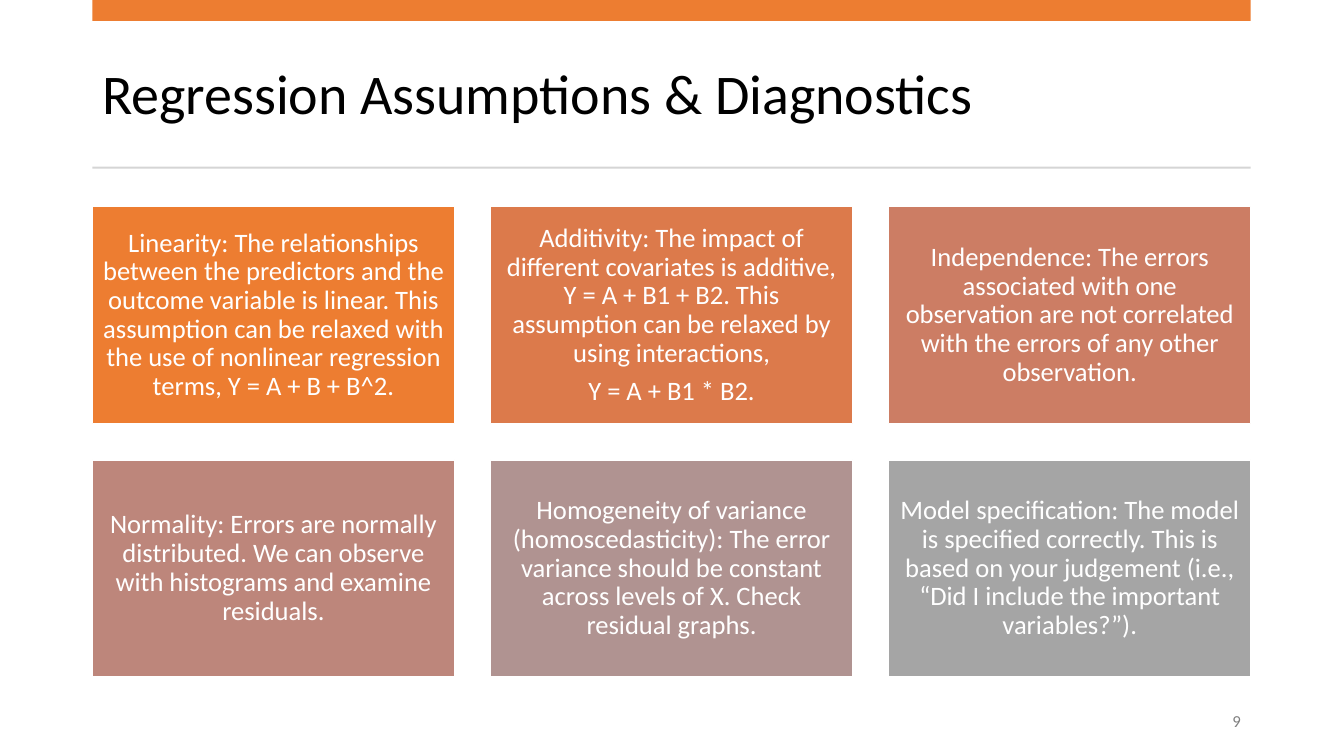
"""Build the slide on regression assumptions and diagnostics."""
from pptx import Presentation
from pptx.dml.color import RGBColor
from pptx.enum import shapes, text
from pptx.util import Cm, Pt

TITLE = "Regression Assumptions & Diagnostics"
NUMBER = "9"
CARDS = [
    ("linear", ["Linearity: The relationships between the predictors and the outcome "
                "variable is linear. This assumption can be relaxed with the use of "
                "nonlinear regression terms, Y = A + B + B^2."]),
    ("add", ["Additivity: The impact of different covariates is additive, "
             "Y = A + B1 + B2. This assumption can be relaxed by using interactions,",
             "Y = A + B1 * B2."]),
    ("indep", ["Independence: The errors associated with one observation are not "
               "correlated with the errors of any other observation."]),
    ("normal", ["Normality: Errors are normally distributed. We can observe with "
                "histograms and examine residuals."]),
    ("homog", ["Homogeneity of variance (homoscedasticity): The error variance should "
               "be constant across levels of X. Check residual graphs."]),
    ("model", ["Model specification: The model is specified correctly. This is based "
               "on your judgement (i.e., “Did I include the important variables?”)."]),
]
COLORS = {
    "linear": "ED7D31", "add": "DC7A4B", "indep": "CC7D64",
    "normal": "BD867B", "homog": "B09391", "model": "A5A5A5",
    "bar": "ED7D31", "rule": "D5D5D5",
    "white": "FFFFFF", "black": "000000", "gray": "808080",
}
FONT = "Calibri"
LEFT, WIDTH = 2.33, 29.19
COLS, GAP = 3, 0.91
CARD_TOP, CARD_H = 5.21, 5.47
CARD_W = (WIDTH - GAP * (COLS - 1)) / COLS


def color(name):
    """Return the named colour."""
    return RGBColor.from_string(COLORS[name])


def write(frame, lines, size, ink, align, spacing=1.0):
    """Fill a text frame with evenly styled, vertically centred lines."""
    frame.word_wrap = True
    frame.vertical_anchor = text.MSO_ANCHOR.MIDDLE
    frame.text = "\n".join(lines)
    for par in frame.paragraphs:
        par.alignment = align
        par.line_spacing = spacing
        par.font.name = FONT
        par.font.size = Pt(size)
        par.font.color.rgb = color(ink)
    for par in frame.paragraphs[:-1]:
        par.space_after = Pt(size * 0.35)


def block(slide, box, fill):
    """Add a plain filled rectangle."""
    shape = slide.shapes.add_shape(shapes.MSO_SHAPE.RECTANGLE, *map(Cm, box))
    shape.shadow.inherit = False
    shape.fill.solid()
    shape.fill.fore_color.rgb = color(fill)
    shape.line.fill.background()
    return shape


def card(slide, index, fill, lines):
    """Add one assumption card at its place in the grid."""
    row, col = divmod(index, COLS)
    left = LEFT + col * (CARD_W + GAP)
    top = CARD_TOP + row * (CARD_H + GAP)
    shape = block(slide, (left, top, CARD_W, CARD_H), fill)
    shape.line.color.rgb = color("white")
    shape.line.width = Pt(1)
    frame = shape.text_frame
    frame.margin_left = frame.margin_right = Cm(0.2)
    frame.margin_top = frame.margin_bottom = Cm(0.2)
    write(frame, lines, 19, "white", text.PP_ALIGN.CENTER, 0.9)


def main():
    """Build and save the slide."""
    deck = Presentation()
    deck.slide_width, deck.slide_height = Cm(33.87), Cm(19.05)
    slide = deck.slides.add_slide(deck.slide_layouts[6])
    block(slide, (LEFT, 0, WIDTH, 0.53), "bar")
    block(slide, (LEFT, 4.2, WIDTH, 0.05), "rule")
    title = slide.shapes.add_textbox(Cm(LEFT), Cm(0.94), Cm(WIDTH), Cm(3))
    write(title.text_frame, [TITLE], 40, "black", text.PP_ALIGN.LEFT, 0.9)
    for index, (fill, lines) in enumerate(CARDS):
        card(slide, index, fill, lines)
    page = slide.shapes.add_textbox(Cm(24.2), Cm(17.65), Cm(7.32), Cm(1.02))
    write(page.text_frame, [NUMBER], 12, "gray", text.PP_ALIGN.RIGHT)
    deck.save("out.pptx")


if __name__ == "__main__":
    main()
